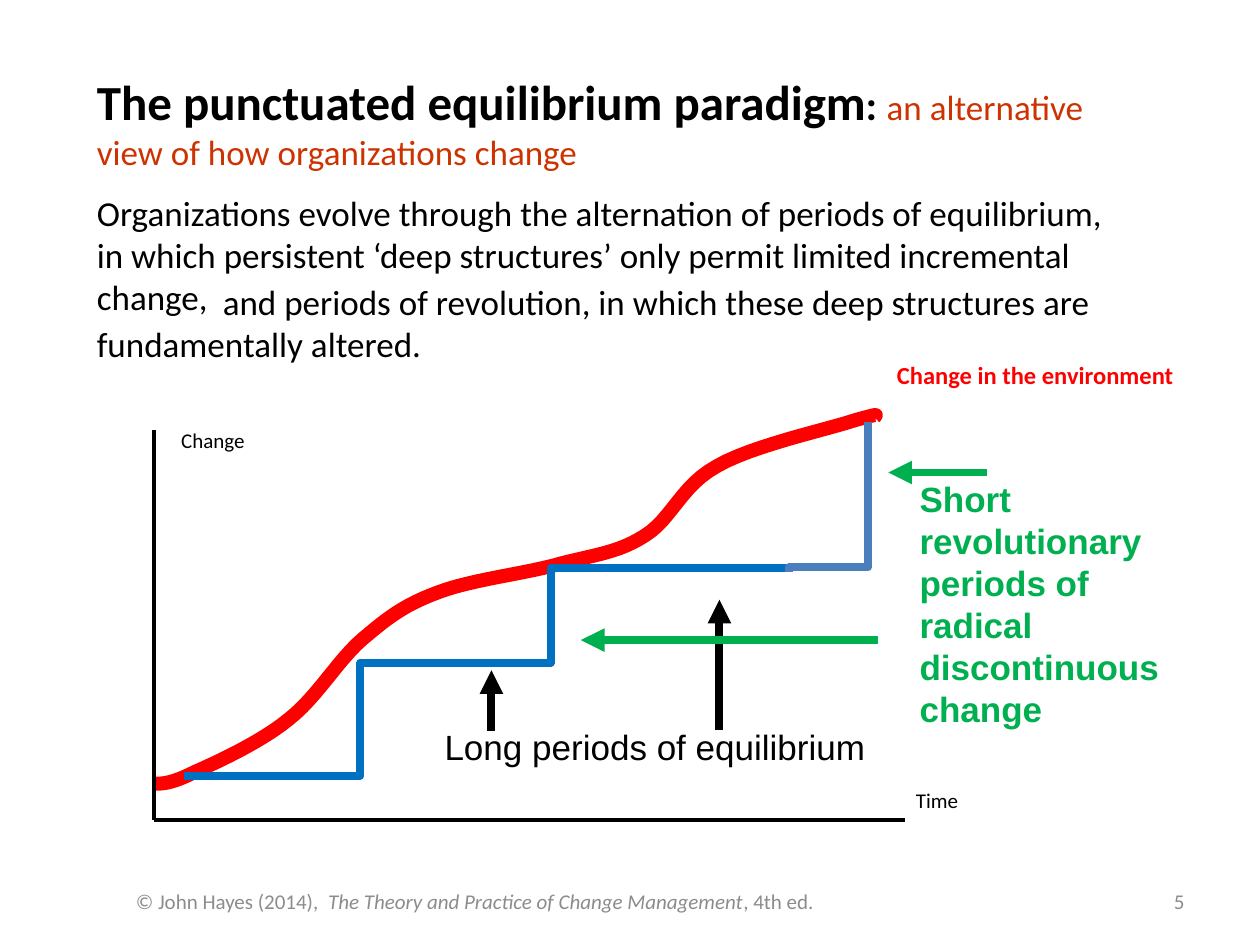
"""Build the punctuated equilibrium slide."""
from lxml import etree
from pptx import Presentation
from pptx.dml.color import RGBColor
from pptx.enum.shapes import MSO_CONNECTOR
from pptx.enum.text import MSO_ANCHOR, PP_ALIGN
from pptx.oxml.ns import qn
from pptx.util import Inches, Pt

LINE, BENT = MSO_CONNECTOR.STRAIGHT, MSO_CONNECTOR.ELBOW
TOP, MID = MSO_ANCHOR.TOP, MSO_ANCHOR.MIDDLE
LEFT, RIGHT = PP_ALIGN.LEFT, PP_ALIGN.RIGHT

HUES = {"black": "000000", "rust": "CC3300", "red": "FF0000", "green": "00B050",
        "blue": "0070C0", "steel": "4B7EBC", "gray": "8C8C8C"}

HEAD = [("The punctuated equilibrium paradigm", 28, "black", "b"),
        (": ", 24, "black", "b"),
        ("an alternative view of how organizations change", 20, "rust", "")]
BODY = [("Organizations evolve through the alternation of periods of equilibrium, "
         "in which persistent ‘deep structures’ only permit limited incremental "
         "change,", 20, "black", "")]
MORE = [("and periods of revolution, in which these deep structures are "
         "fundamentally altered.", 20, "black", "")]
FOOT = [("© John Hayes (2014),  ", 12, "gray", ""),
        ("The Theory and Practice of Change Management", 12, "gray", "i"),
        (", 4th ed.", 12, "gray", "")]
PAGE = [("5", 12, "gray", "")]

BLOCKS = [((7.17, 6.95, 2.33, 0.4), PAGE, MID, RIGHT, 0),
          ((0.67, 1.47, 8.19, 1.11), BODY, TOP, LEFT, 0),
          ((0.67, 0.52, 8.35, 1.31), HEAD, TOP, LEFT, 0),
          ((0.67, 2.18, 8.5, 0.77), MORE, TOP, LEFT, 1),
          ((0.98, 6.95, 7.64, 0.4), FOOT, MID, LEFT, 0)]

LABELS = [((7.17, 6.2, 0.9, 0.31), "Time", 12, "black", "", "Calibri"),
          ((7.02, 2.81, 2.71, 0.7), "Change in the environment", 14, "red", "b", "Calibri"),
          ((1.34, 3.34, 0.94, 0.49), "Change", 12, "black", "", "Calibri"),
          ((3.43, 5.71, 3.94, 0.64), "Long periods of equilibrium", 20, "black", "", "Arial"),
          ((7.2, 3.74, 2.36, 1.43),
           "Short revolutionary periods of radical discontinuous change",
           20, "green", "b", "Arial")]

START = (1.22, 6.22)
CURVE = [((1.29, 6.22), (1.36, 6.22), (1.54, 6.13)),
         ((1.72, 6.05), (2.07, 5.89), (2.29, 5.71)),
         ((2.52, 5.53), (2.68, 5.24), (2.88, 5.07)),
         ((3.08, 4.9), (3.21, 4.8), (3.48, 4.7)),
         ((3.74, 4.6), (4.19, 4.55), (4.46, 4.47)),
         ((4.74, 4.4), (4.92, 4.38), (5.12, 4.25)),
         ((5.33, 4.12), (5.41, 3.85), (5.69, 3.7)),
         ((5.96, 3.54), (6.56, 3.41), (6.77, 3.34)),
         ((6.98, 3.28), (6.96, 3.29), (6.94, 3.31))]

AXES = [(1.22, 6.51, 7.18, 6.51), (1.22, 6.51, 1.22, 3.41)]
STEPS = [((1.46, 6.16, 4.26, 5.26), "blue", 50000, 0),
         ((3.49, 5.26, 6.28, 4.51), "blue", 31600, 0),
         ((7.17, 4.26, 5.98, 3.63), "steel", 3200, 90)]
ARROWS = [((3.9, 5.8, 3.9, 5.32), "black"), ((5.71, 5.79, 5.71, 4.76), "black"),
          ((7.83, 3.75, 7.05, 3.75), "green"), ((6.97, 5.08, 4.61, 5.08), "green")]


def tint(name):
    return RGBColor.from_string(HUES[name])


def write(slide, box, runs, anchor=TOP, align=LEFT, indent=0, face="Calibri", after=0):
    frame = slide.shapes.add_textbox(*map(Inches, box)).text_frame
    frame.word_wrap = True
    frame.vertical_anchor = anchor
    para = frame.paragraphs[0]
    para.alignment = align
    para.space_after = Pt(after)
    if indent:
        props = para._p.get_or_add_pPr()
        props.set("marL", "0")
        props.set("indent", str(Inches(indent)))
    for text, size, hue, style in runs:
        run = para.add_run()
        run.text = text
        font = run.font
        font.name, font.size = face, Pt(size)
        font.bold, font.italic = style == "b", style == "i"
        font.color.rgb = tint(hue)


def join(slide, ends, hue, width, kind=LINE):
    link = slide.shapes.add_connector(kind, *map(Inches, ends))
    link.line.color.rgb = tint(hue)
    link.line.width = Pt(width)
    etree.SubElement(link._element.spPr, qn("a:effectLst"))
    return link


def step(slide, ends, hue, bend, turn):
    props = join(slide, ends, hue, 4.5, BENT)._element.spPr
    guides = props.find(qn("a:prstGeom")).get_or_add_avLst()
    etree.SubElement(guides, qn("a:gd"), name="adj1", fmla=f"val {bend}")
    if turn:
        props.find(qn("a:xfrm")).set("rot", str(turn * 60000))


def arrow(slide, ends, hue):
    link = join(slide, ends, hue, 4.5)
    etree.SubElement(link.line._get_or_add_ln(), qn("a:tailEnd"), type="triangle")


def trace(start, curve, count=12):
    points = []
    for one, two, end in curve:
        for i in range(1, count + 1):
            t = i / count
            u = 1 - t
            points.append(tuple(
                Inches(u**3 * a + 3 * u * u * t * b + 3 * u * t * t * c + t**3 * d)
                for a, b, c, d in zip(start, one, two, end)))
        start = end
    return points


def draw_curve(slide):
    pen = slide.shapes.build_freeform(*map(Inches, START))
    pen.add_line_segments(trace(START, CURVE), close=False)
    shape = pen.convert_to_shape()
    shape.shadow.inherit = False
    shape.fill.background()
    shape.line.color.rgb = tint("red")
    shape.line.width = Pt(8)


def main():
    deck = Presentation()
    deck.slide_width, deck.slide_height = Inches(10), Inches(7.5)
    slide = deck.slides.add_slide(deck.slide_layouts[6])
    draw_curve(slide)
    for ends in AXES:
        join(slide, ends, "black", 2.25)
    for item in STEPS:
        step(slide, *item)
    for item in ARROWS:
        arrow(slide, *item)
    for block in BLOCKS:
        write(slide, *block)
    for box, text, size, hue, style, face in LABELS:
        write(slide, box, [(text, size, hue, style)], face=face, after=10)
    deck.save("out.pptx")


if __name__ == "__main__":
    main()
